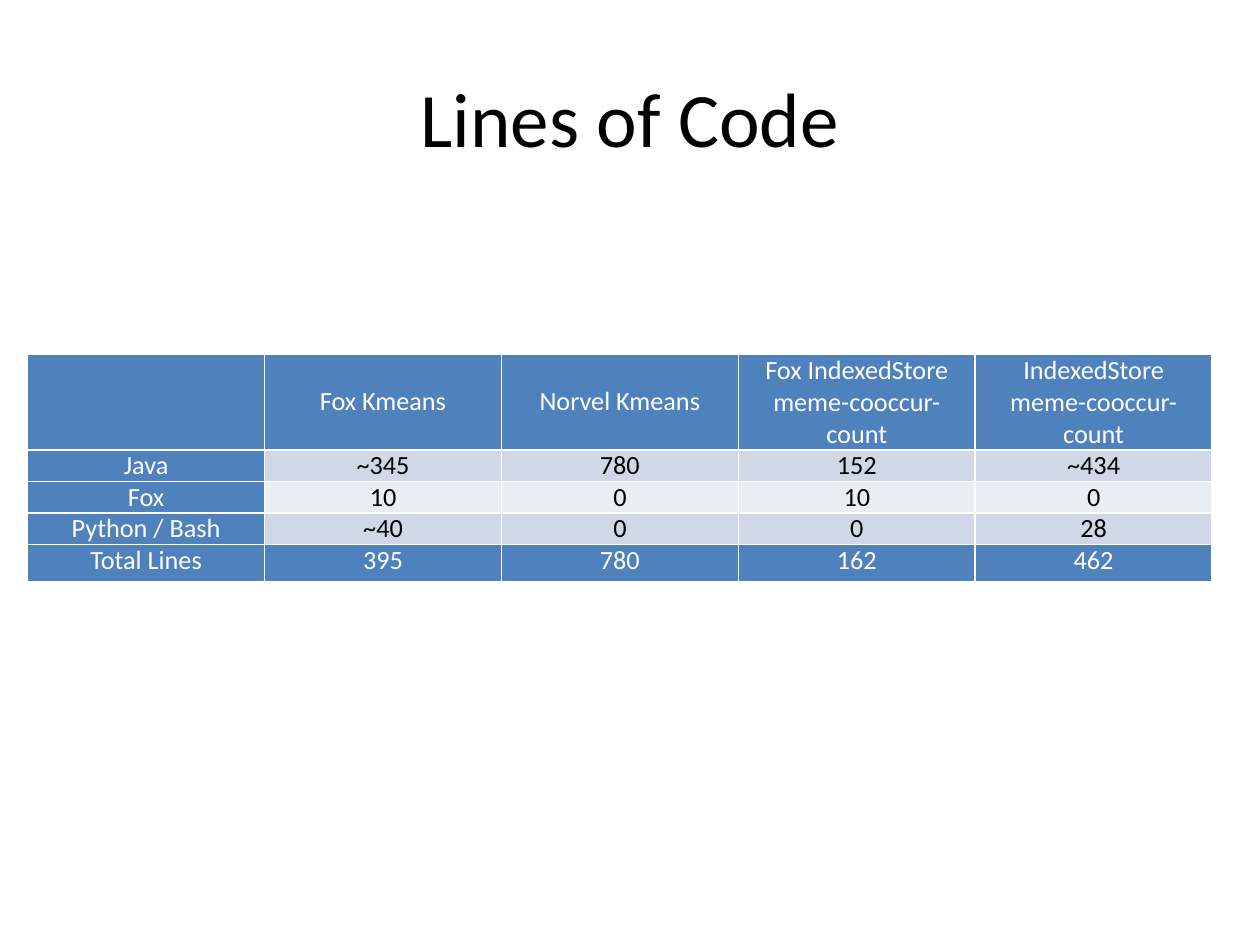
from pptx import Presentation
from pptx.dml.color import RGBColor
from pptx.enum.text import MSO_ANCHOR, PP_ALIGN
from pptx.util import Inches, Pt

CENTER = PP_ALIGN.CENTER
MIDDLE, TOP = MSO_ANCHOR.MIDDLE, MSO_ANCHOR.TOP

FONT = "Calibri"
COLORS = {
    "black": "000000",
    "white": "FFFFFF",
    "header": "4F81BD",
    "band_dark": "D0D8E8",
    "band_light": "E9EDF4",
}
ROWS = [
    ["", "Fox Kmeans", "Norvel Kmeans",
     "Fox IndexedStore\nmeme-cooccur-count", "IndexedStore\nmeme-cooccur-count"],
    ["Java", "~345", "780", "152", "~434"],
    ["Fox", "10", "0", "10", "0"],
    ["Python / Bash", "~40", "0", "0", "28"],
    ["Total Lines", "395", "780", "162", "462"],
]
ROW_HEIGHTS = [0.76, 0.25, 0.25, 0.25, 0.3]
COLUMN_WIDTH = 1.88


def rgb(name):
    return RGBColor.from_string(COLORS[name])


def write_text(tf, text, size, color):
    """Write centred text, one paragraph for each line."""
    for i, line in enumerate(text.split("\n")):
        p = tf.add_paragraph() if i else tf.paragraphs[0]
        p.alignment = CENTER
        p.font.size = Pt(size)
        if not line:
            continue
        r = p.add_run()
        r.text = line
        r.font.name = FONT
        r.font.size = Pt(size)
        r.font.bold = False
        r.font.color.rgb = rgb(color)


def add_title(slide, text):
    sp = slide.shapes.add_textbox(Inches(0.5), Inches(0.3), Inches(9), Inches(1.25))
    tf = sp.text_frame
    tf.word_wrap = True
    tf.vertical_anchor = MIDDLE
    write_text(tf, text, size=44, color="black")


def format_cell(cell, text, fill, color, anchor):
    cell.fill.solid()
    cell.fill.fore_color.rgb = rgb(fill)
    cell.margin_left = cell.margin_right = Inches(0.13)
    cell.margin_top = cell.margin_bottom = 0
    cell.vertical_anchor = anchor
    write_text(cell.text_frame, text, size=15, color=color)


def add_code_table(slide):
    """Add the table; its default style draws the white borders."""
    last = len(ROWS) - 1
    columns = len(ROWS[0])
    table = slide.shapes.add_table(
        len(ROWS), columns, Inches(0.22), Inches(2.81),
        Inches(COLUMN_WIDTH * columns), Inches(sum(ROW_HEIGHTS))).table
    table.first_col = table.last_row = True
    for column in table.columns:
        column.width = Inches(COLUMN_WIDTH)
    for i, (values, height) in enumerate(zip(ROWS, ROW_HEIGHTS)):
        table.rows[i].height = Inches(height)
        band = "band_dark" if i % 2 else "band_light"
        for j, value in enumerate(values):
            is_header = i in (0, last) or j == 0
            format_cell(table.cell(i, j), value,
                        fill="header" if is_header else band,
                        color="white" if is_header else "black",
                        anchor=TOP if i else MIDDLE)


def main():
    prs = Presentation()
    prs.slide_width, prs.slide_height = Inches(10), Inches(7.5)
    slide = prs.slides.add_slide(prs.slide_layouts[6])
    add_title(slide, "Lines of Code")
    add_code_table(slide)
    prs.save("out.pptx")


if __name__ == "__main__":
    main()
